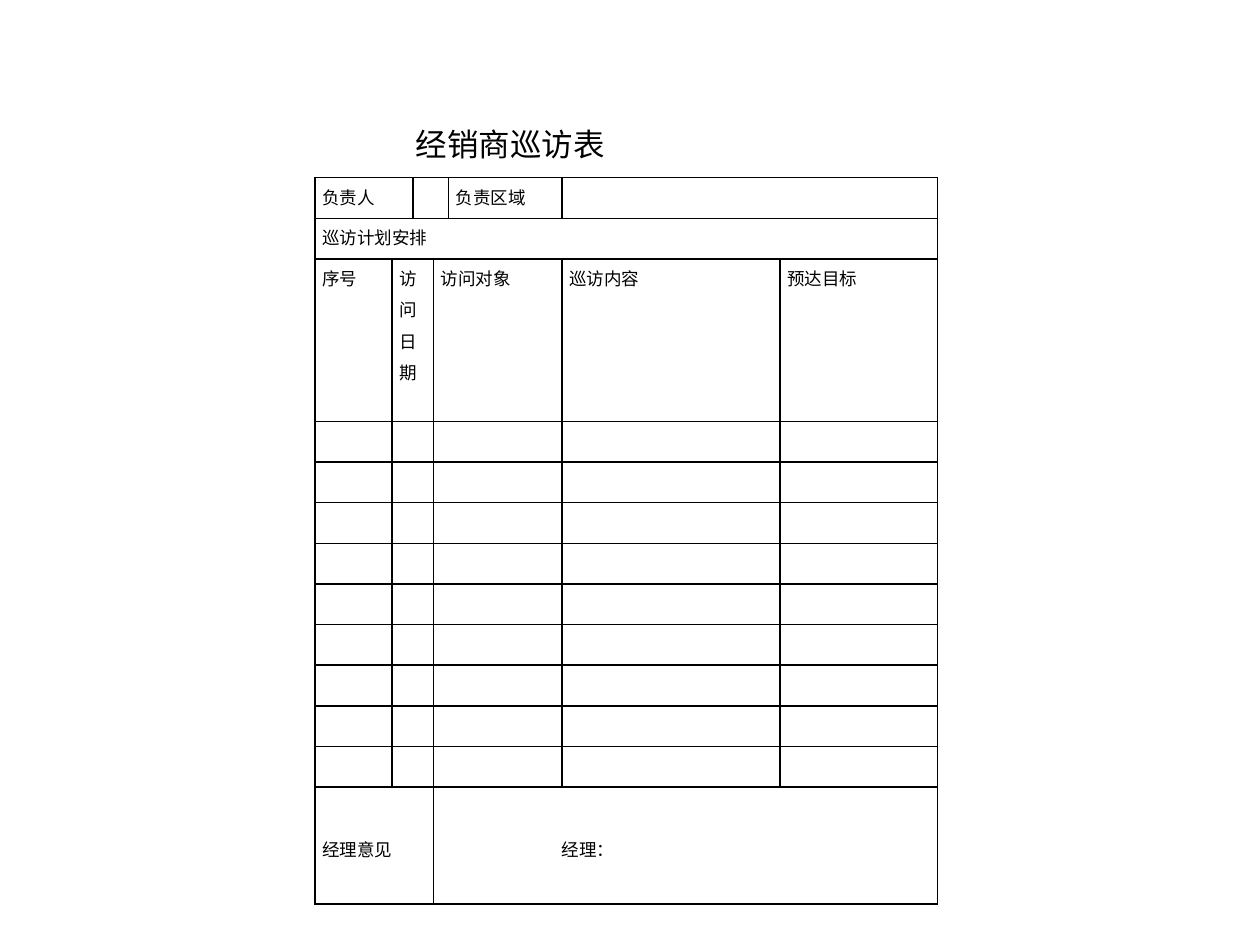
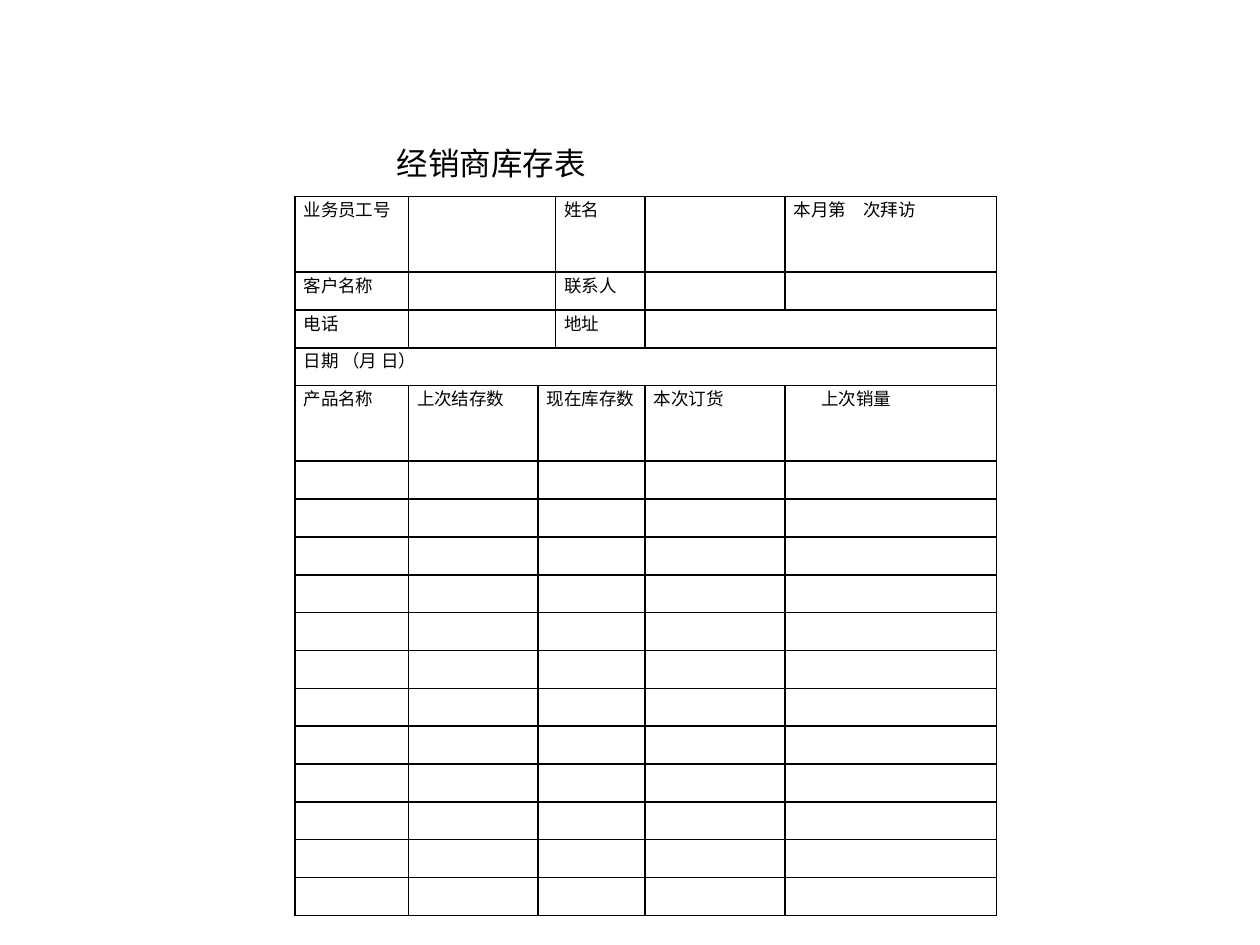
import pptx
import pptx.util
import pptx.dml.color
import pptx.enum.text
import pptx.oxml.ns
import lxml.etree

Inches, Pt = pptx.util.Inches, pptx.util.Pt
ANCHOR = pptx.enum.text.MSO_ANCHOR
ALIGN = pptx.enum.text.PP_ALIGN

COLORS = {"ink": "000000"}
BODY_FONT, TITLE_FONT = "Calibri", "Noto Sans CJK SC"
BORDER_WIDTH = Pt(1)
BLANK_LINE = Pt(12)


def write(frame, text, size=10, font=BODY_FONT, align=None, line=None,
          after=None, indent=0):
    paragraph = frame.paragraphs[0]
    paragraph.alignment = align
    paragraph.line_spacing = line
    paragraph.space_after = after
    if indent:
        properties = paragraph._p.get_or_add_pPr()
        properties.set("marL", "0")
        properties.set("indent", str(Inches(indent)))
    if text:
        run = paragraph.add_run()
        run.text = text
        run.font.size = Pt(size)
        run.font.name = font
        run.font.color.rgb = pptx.dml.color.RGBColor.from_string(COLORS["ink"])


def add_title(slide, left, top, width, text):
    box = slide.shapes.add_textbox(Inches(left), Inches(top), Inches(width), Inches(0.4))
    box.text_frame.word_wrap = True
    box.text_frame.auto_size = pptx.enum.text.MSO_AUTO_SIZE.SHAPE_TO_FIT_TEXT
    write(box.text_frame, text, size=18, font=TITLE_FONT)


def add_borders(cell):
    qn = pptx.oxml.ns.qn
    properties = cell._tc.get_or_add_tcPr()
    for position, side in enumerate(("a:lnL", "a:lnR", "a:lnT", "a:lnB")):
        edge = lxml.etree.Element(qn(side), w=str(BORDER_WIDTH))
        fill = lxml.etree.SubElement(edge, qn("a:solidFill"))
        lxml.etree.SubElement(fill, qn("a:srgbClr"), val=COLORS["ink"])
        properties.insert(position, edge)


def add_form(slide, left, top, widths, heights, rows, inset, line=None, after=None):
    """Each row lists (columns spanned, text, optional format) from left to right."""
    form = slide.shapes.add_table(
        len(heights), len(widths), Inches(left), Inches(top),
        Inches(sum(widths)), Inches(sum(heights))).table
    form.first_row = form.horz_banding = False
    for column, width in zip(form.columns, widths):
        column.width = Inches(width)
    for row, height in zip(form.rows, heights):
        row.height = Inches(height)

    # Plain ruled cells
    for cell in form.iter_cells():
        cell.fill.background()
        cell.margin_left = cell.margin_right = Inches(inset)
        cell.margin_top = cell.margin_bottom = 0
        add_borders(cell)

    # Merged fields and their labels
    for row_index, fields in enumerate(rows):
        start = 0
        for span, text, *extra in fields:
            cell = form.cell(row_index, start)
            if span > 1:
                cell.merge(form.cell(row_index, start + span - 1))
            options = dict(extra[0]) if extra else {}
            cell.vertical_anchor = options.pop("anchor", ANCHOR.TOP)
            spacing = line or (None if text else BLANK_LINE)
            write(cell.text_frame, text, align=ALIGN.JUSTIFY, line=spacing,
                  after=after, **options)
            start += span


def build_visit_slide(slide):
    add_title(slide, 3.2, 0.94, 2.66, "经销商巡访表")
    plan_rows, header_height, opinion_height = 9, 1.29, 0.93
    row_height = (5.77 - header_height - opinion_height) / (plan_rows + 2)
    heights = ([row_height] * 2 + [header_height]
               + [row_height] * plan_rows + [opinion_height])
    rows = [
        [(2, "负责人"), (2, ""), (1, "负责区域"), (2, "")],
        [(7, "巡访计划安排")],
        [(1, "序号"), (2, "访问日期"), (2, "访问对象"), (1, "巡访内容"), (1, "预达目标")],
        *[[(1, ""), (2, ""), (2, ""), (1, ""), (1, "")]] * plan_rows,
        [(3, "经理意见", {"anchor": ANCHOR.MIDDLE}),
         (4, "经理：", {"anchor": ANCHOR.MIDDLE, "indent": 0.96})],
    ]
    add_form(slide, 2.5, 1.41, [0.61, 0.17, 0.16, 0.12, 0.9, 1.73, 1.25],
             heights, rows, inset=0.06, line=Pt(18), after=Pt(6))


def build_stock_slide(slide):
    add_title(slide, 3.05, 1.09, 2.81, "经销商库存表")
    product_rows = 12
    heights = [0.6] + [0.3] * 3 + [0.6] + [0.3] * product_rows
    rows = [
        [(1, "业务员工号"), (2, ""), (1, "姓名"), (1, ""), (1, "本月第　次拜访")],
        [(1, "客户名称"), (2, ""), (1, "联系人"), (1, ""), (1, "")],
        [(1, "电话"), (2, ""), (1, "地址"), (2, "")],
        [(6, "日期 （月 日）")],
        [(1, "产品名称"), (1, "上次结存数"), (2, "现在库存数"), (1, "本次订货"),
         (1, "上次销量", {"indent": 0.22})],
        *[[(1, ""), (1, ""), (2, ""), (1, ""), (1, "")]] * product_rows,
    ]
    add_form(slide, 2.34, 1.56, [0.9, 1.03, 0.14, 0.71, 1.11, 1.68],
             heights, rows, inset=0.07)


def main():
    deck = pptx.Presentation()
    deck.slide_width, deck.slide_height = Inches(10), Inches(7.5)
    for build in (build_visit_slide, build_stock_slide):
        build(deck.slides.add_slide(deck.slide_layouts[6]))
    deck.save("out.pptx")


if __name__ == "__main__":
    main()
